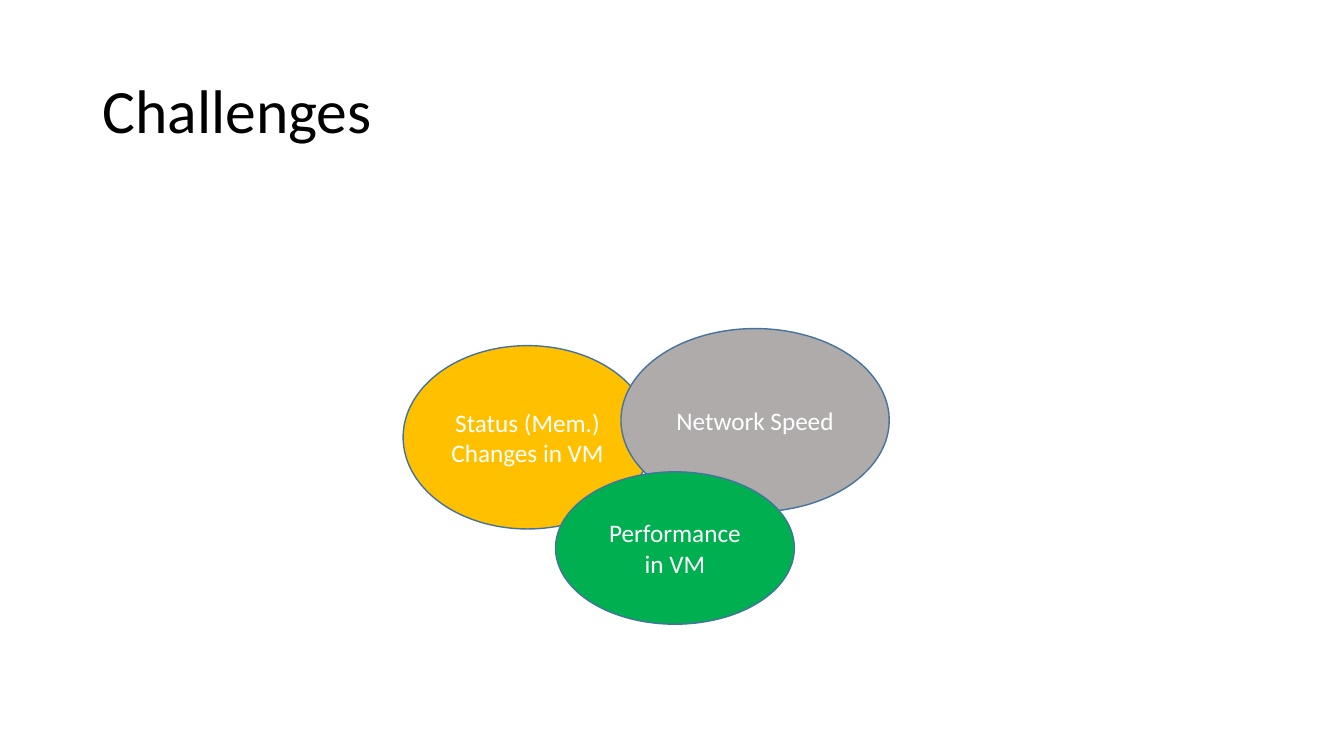
"""Build the Challenges slide with three overlapping ovals."""
from dataclasses import dataclass

from pptx import Presentation
from pptx.dml.color import RGBColor
from pptx.enum.shapes import MSO_SHAPE
from pptx.enum.text import MSO_ANCHOR, PP_ALIGN
from pptx.slide import Slide
from pptx.text.text import TextFrame
from pptx.util import Cm, Pt

OVAL = MSO_SHAPE.OVAL
MIDDLE = MSO_ANCHOR.MIDDLE
LEFT = PP_ALIGN.LEFT
CENTER = PP_ALIGN.CENTER
FONT = "Calibri"
COLORS = {
    "black": "000000",
    "white": "FFFFFF",
    "edge": "43739E",
    "gold": "FFC000",
    "gray": "AFABAB",
    "green": "00B050",
}


@dataclass
class Oval:
    text: str
    fill: str
    left: float
    top: float
    width: float
    height: float


OVALS = [
    Oval("Status (Mem.) Changes in VM", "gold", 10.16, 8.71, 6.27, 4.62),
    Oval("Network Speed", "gray", 15.65, 8.28, 6.76, 4.62),
    Oval("Performance in VM", "green", 14, 11.89, 6.02, 3.84),
]


def color(name: str) -> RGBColor:
    return RGBColor.from_string(COLORS[name])


def write(frame: TextFrame, text: str, size: int, tint: str, align: PP_ALIGN) -> None:
    frame.text = text
    frame.word_wrap = True
    frame.vertical_anchor = MIDDLE
    line = frame.paragraphs[0]
    line.alignment = align
    font = line.runs[0].font
    font.name = FONT
    font.size = Pt(size)
    font.color.rgb = color(tint)


def add_title(slide: Slide, text: str) -> None:
    title = slide.shapes.title
    title.left, title.top = Cm(2.33), Cm(1.01)
    title.width, title.height = Cm(29.21), Cm(3.68)
    write(title.text_frame, text, 44, "black", LEFT)
    title.text_frame.paragraphs[0].line_spacing = 0.9


def add_oval(slide: Slide, oval: Oval) -> None:
    shape = slide.shapes.add_shape(
        OVAL, Cm(oval.left), Cm(oval.top), Cm(oval.width), Cm(oval.height)
    )
    shape.shadow.inherit = False
    shape.fill.solid()
    shape.fill.fore_color.rgb = color(oval.fill)
    shape.line.color.rgb = color("edge")
    shape.line.width = Pt(1)
    write(shape.text_frame, oval.text, 18, "white", CENTER)


def main() -> None:
    deck = Presentation()
    deck.slide_width, deck.slide_height = Cm(33.87), Cm(19.05)
    slide = deck.slides.add_slide(deck.slide_layouts[5])
    add_title(slide, "Challenges")
    for oval in OVALS:
        add_oval(slide, oval)
    deck.save("out.pptx")


if __name__ == "__main__":
    main()
